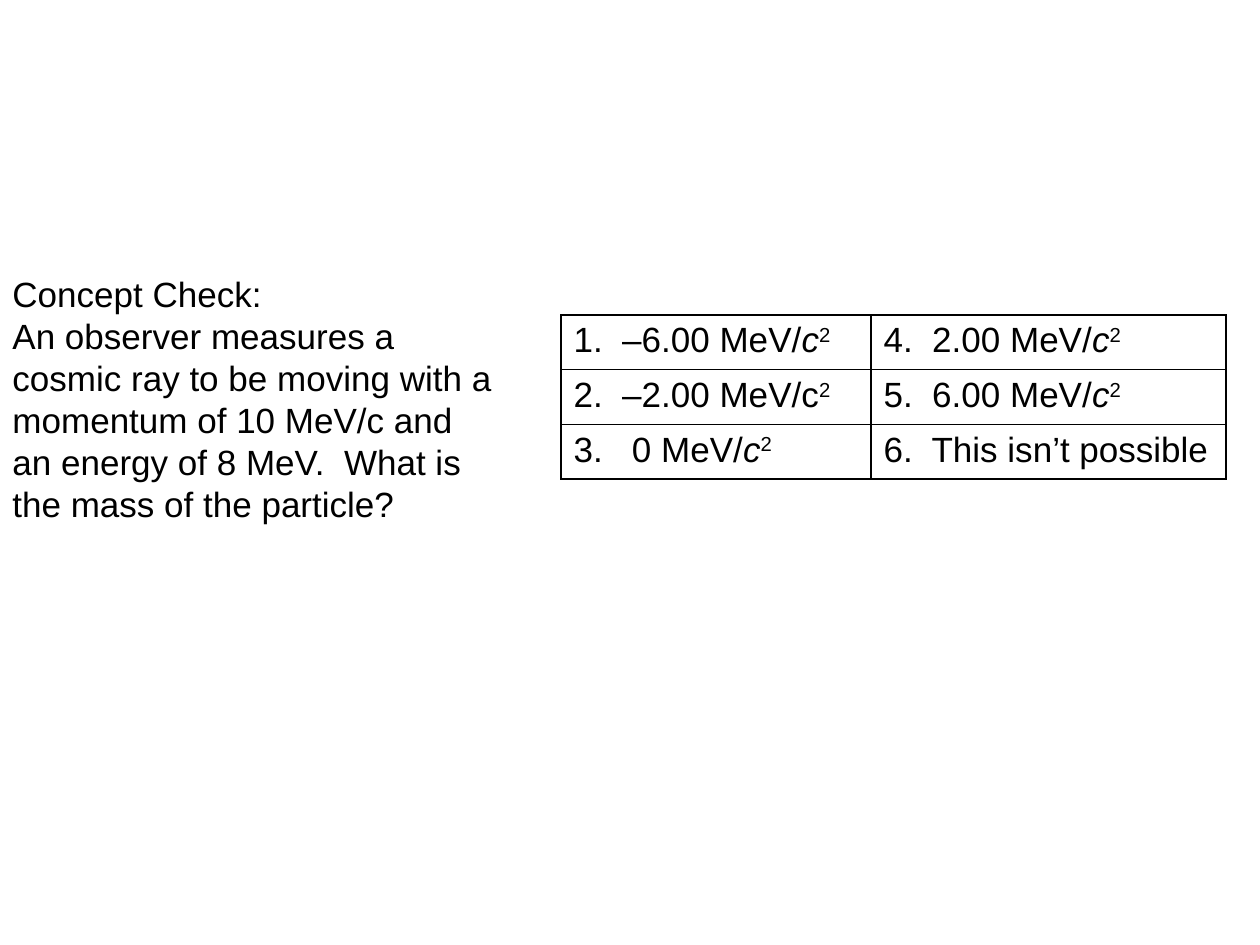
import pptx
import pptx.dml.color
import pptx.enum.text
import pptx.oxml
import pptx.oxml.ns
import pptx.util

PX = 914400 / 126  # EMU per px
BLACK = "000000"


def emu(px):
    return pptx.util.Emu(round(px * PX))


def color(value):
    return pptx.dml.color.RGBColor.from_string(value)


def add_text(p, text, font="Arial", size=20, fill=BLACK, italic=False, baseline=0):
    r = p.add_run()
    r.text = text
    r.font.name = font
    r.font.size = pptx.util.Pt(size)
    r.font.color.rgb = color(fill)
    r.font.italic = italic
    if baseline:
        r.font._element.set("baseline", str(baseline * 1000))
    return r


class Deck:
    def __init__(self, prs, line=BLACK, line_width=1):
        self.line, self.line_width = line, line_width
        self.s = prs.slides.add_slide(prs.slide_layouts[6])

    def text_box(self, x, y, w, h, paragraphs):
        sp = self.s.shapes.add_textbox(emu(x), emu(y), emu(w), emu(h))
        tf = sp.text_frame
        tf.word_wrap = True
        tf.auto_size = pptx.enum.text.MSO_AUTO_SIZE.SHAPE_TO_FIT_TEXT
        for i, text in enumerate(paragraphs):
            p = tf.add_paragraph() if i else tf.paragraphs[0]
            add_text(p, text)

    def borders(self, cell):
        tc_pr = cell._tc.get_or_add_tcPr()
        for i, side in enumerate("LRTB"):
            tc_pr.insert(i, pptx.oxml.parse_xml(
                f'<a:ln{side} {pptx.oxml.ns.nsdecls("a")} w="{self.line_width * 12700}">'
                f'<a:solidFill><a:srgbClr val="{self.line}"/></a:solidFill></a:ln{side}>'))

    def table(self, x, y, widths, h, rows):
        tbl = self.s.shapes.add_table(len(rows), len(widths), emu(x), emu(y),
                                      emu(sum(widths)), emu(h)).table
        tbl.first_row = tbl.horz_banding = False
        for col, w in zip(tbl.columns, widths):
            col.width = emu(w)
        for i, row in enumerate(rows):
            for j, runs in enumerate(row):
                cell = tbl.cell(i, j)
                cell.fill.background()
                self.borders(cell)
                for text, style in runs:
                    add_text(cell.text_frame.paragraphs[0], text, **style)


def mass(text, italic=True):
    """Runs for a mass in MeV/c², with c italic or upright."""
    square = ("2", {"baseline": 30})
    if italic:
        return [(text + " MeV/", {}), ("c", {"italic": True}), square]
    return [(text + " MeV/c", {}), square]


def main():
    prs = pptx.Presentation()
    prs.slide_width, prs.slide_height = emu(1260), emu(945)
    deck = Deck(prs)

    # Question
    deck.text_box(0, 266, 508, 265, [
        "Concept Check:",
        "An observer measures a cosmic ray to be moving with a momentum of "
        "10 MeV/c and an energy of 8 MeV.  What is the mass of the particle?",
    ])

    # Answer choices
    deck.table(561, 315, [310, 355], 164, [
        [mass("1.  –6.00"), mass("4.  2.00")],
        [mass("2.  –2.00", italic=False), mass("5.  6.00")],
        [mass("3.   0"), [("6.  This isn’t possible", {})]],
    ])

    prs.save("out.pptx")


if __name__ == "__main__":
    main()
